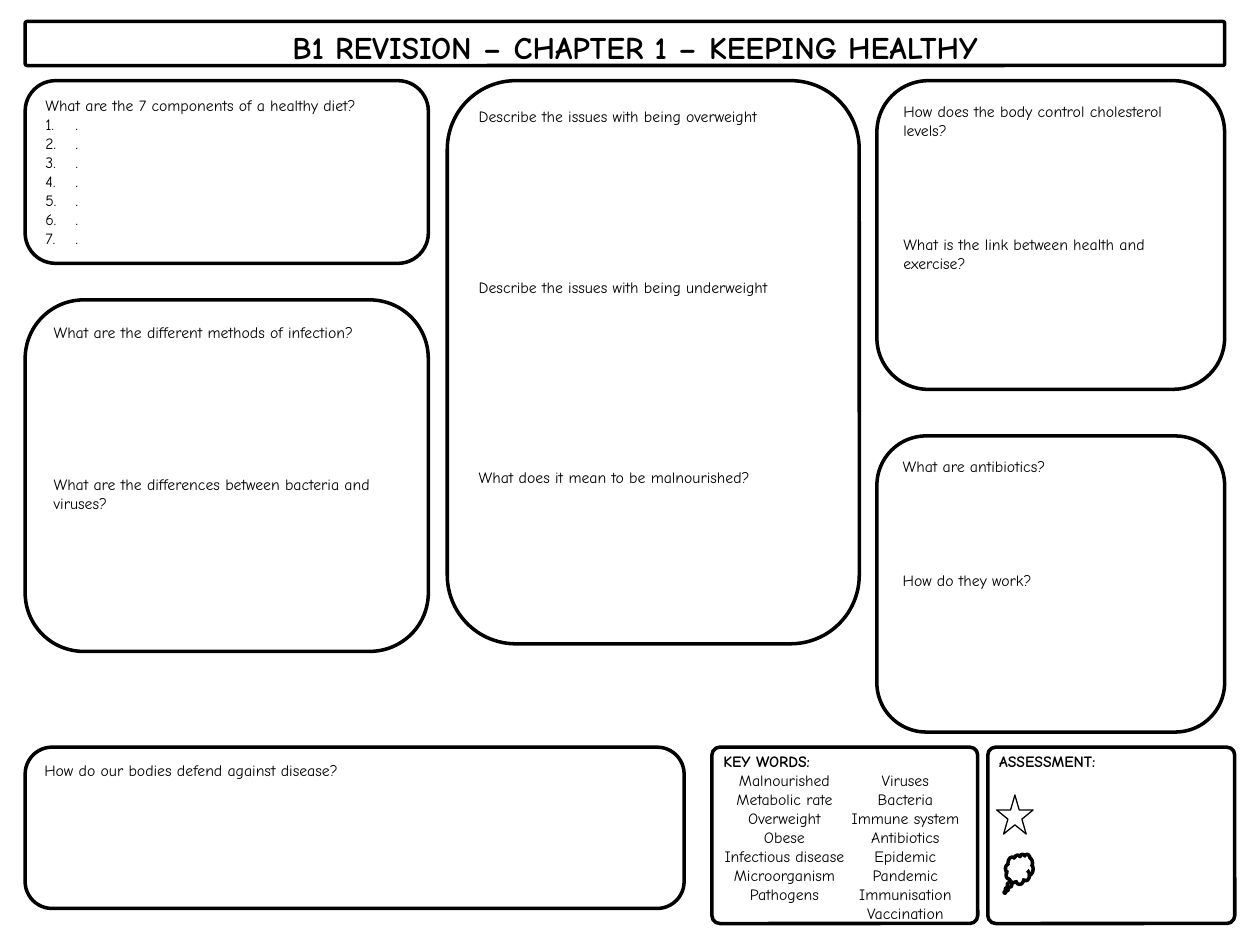
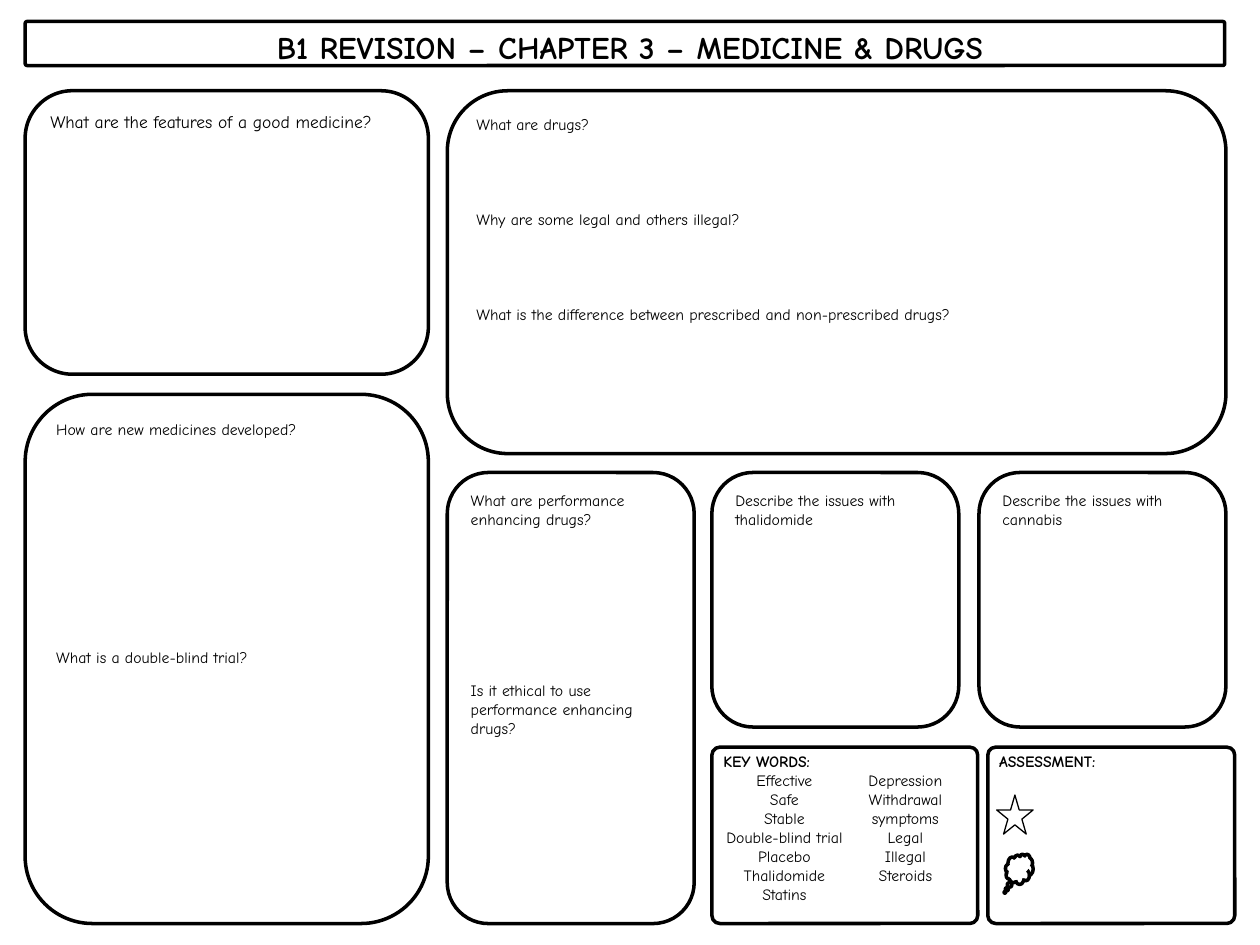
from lxml.etree import SubElement
from pptx import Presentation
from pptx.dml.color import RGBColor
from pptx.enum.shapes import MSO_SHAPE as Preset
from pptx.enum.text import MSO_ANCHOR as Anchor, MSO_AUTO_SIZE as AutoSize, PP_ALIGN as Align
from pptx.oxml.ns import qn
from pptx.util import Inches, Pt

BLACK = RGBColor(0x00, 0x00, 0x00)
WHITE = RGBColor(0xFF, 0xFF, 0xFF)
FONT = "Comic Neue"
BODY_SIZE = 9
TITLE_SIZE = 18
LINE_PITCH = 10.86
CORNER = 0.045
KEYWORDS_BOX = (5.65, 5.93, 2.11, 1.4)
ASSESSMENT_BOX = (7.84, 5.93, 1.96, 1.4)
LEFT_COLUMN, MIDDLE_COLUMN, RIGHT_COLUMN = 0.2, 3.55, 6.96


class RevisionSheet:
    def __init__(self, presentation):
        self.presentation = presentation
        self.slide = None

    def start(self, title, center, width):
        layout = self.presentation.slide_layouts[5]
        self.slide = self.presentation.slides.add_slide(layout)
        self.outline(Preset.ROUNDED_RECTANGLE, (0.2, 0.17, 9.52, 0.35), corner=CORNER)
        placeholder = self.slide.shapes.title
        placeholder.left, placeholder.top = Inches(center - width / 2), Inches(0.17)
        placeholder.width, placeholder.height = Inches(width), Inches(0.4)
        frame = self.prepare(placeholder.text_frame)
        frame.text = title
        self.style(frame.paragraphs[0], TITLE_SIZE, True, Align.CENTER)

    def prepare(self, frame):
        frame.word_wrap = True
        frame.auto_size = AutoSize.NONE
        frame.vertical_anchor = Anchor.TOP
        frame.margin_left = frame.margin_right = Inches(0.09)
        frame.margin_top = frame.margin_bottom = Inches(0.05)
        return frame

    def style(self, paragraph, size=BODY_SIZE, bold=False, align=Align.LEFT, blank_lines=0):
        paragraph.alignment = align
        paragraph.space_before = Pt(LINE_PITCH * blank_lines)
        for run in paragraph.runs:
            run.font.name = FONT
            run.font.size = Pt(size)
            run.font.bold = bold
            run.font.color.rgb = BLACK

    def outline(self, preset, box, weight=2, fill=None, corner=None):
        shape = self.slide.shapes.add_shape(preset, *map(Inches, box))
        shape.shadow.inherit = False
        shape.line.color.rgb = BLACK
        shape.line.width = Pt(weight)
        if fill is None:
            shape.fill.background()
        else:
            shape.fill.solid()
            shape.fill.fore_color.rgb = fill
        if corner is not None:
            shape.adjustments[0] = corner
        return shape

    def text(self, box, lines, bold=False, align=Align.LEFT):
        text_box = self.slide.shapes.add_textbox(*map(Inches, box))
        frame = self.prepare(text_box.text_frame)
        frame.text = "\n".join(lines)
        for paragraph in frame.paragraphs:
            self.style(paragraph, bold=bold, align=align)

    def panel(self, box, questions, size=BODY_SIZE, numbered=0):
        shape = self.outline(Preset.ROUNDED_RECTANGLE, box, fill=WHITE)
        frame = self.prepare(shape.text_frame)
        frame.text = "\n".join(question for question, _ in questions)
        for paragraph, (_, blank_lines) in zip(frame.paragraphs, questions):
            self.style(paragraph, size, blank_lines=blank_lines)
        for _ in range(numbered):
            self.numbered_line(frame.add_paragraph())

    def numbered_line(self, paragraph):
        paragraph.text = "."
        properties = paragraph._p.get_or_add_pPr()
        properties.set("marL", str(Inches(0.24)))
        properties.set("indent", str(-Inches(0.24)))
        SubElement(properties, qn("a:buFont"), typeface=FONT)
        SubElement(properties, qn("a:buAutoNum"), type="arabicPeriod")
        self.style(paragraph)

    def keywords(self, *columns):
        left, top, width, _ = KEYWORDS_BOX
        line_height = LINE_PITCH / 72
        self.outline(Preset.ROUNDED_RECTANGLE, KEYWORDS_BOX, corner=CORNER)
        self.text((left, top - 0.01, width, 0.25), ["KEY WORDS:"], bold=True)
        for index, words in enumerate(columns):
            column_box = (left + 0.96 * index, top - 0.01 + line_height, 1.15, 1.25)
            self.text(column_box, words, align=Align.CENTER)

    def assessment(self):
        left, top, width, _ = ASSESSMENT_BOX
        self.outline(Preset.ROUNDED_RECTANGLE, ASSESSMENT_BOX, corner=CORNER)
        self.text((left, top - 0.01, width, 0.25), ["ASSESSMENT:"], bold=True)
        self.outline(Preset.STAR_5_POINT, (7.91, 6.31, 0.29, 0.31), weight=0.75)
        thought = self.outline(Preset.CLOUD_CALLOUT, (7.98, 6.78, 0.22, 0.24))
        thought.adjustments[0], thought.adjustments[1] = -0.522, 0.761


def build_keeping_healthy(sheet):
    sheet.start("B1 REVISION – CHAPTER 1 – KEEPING HEALTHY", 5.04, 7.2)
    sheet.keywords(
        ["Malnourished", "Metabolic rate", "Overweight", "Obese",
         "Infectious disease", "Microorganism", "Pathogens"],
        ["Viruses", "Bacteria", "Immune system", "Antibiotics",
         "Epidemic", "Pandemic", "Immunisation", "Vaccination"],
    )
    sheet.assessment()
    sheet.panel((LEFT_COLUMN, 0.64, 3.2, 1.45),
                [("What are the 7 components of a healthy diet?", 0)], numbered=7)
    sheet.panel((MIDDLE_COLUMN, 0.64, 3.27, 4.47), [
        ("Describe the issues with being overweight", 0),
        ("Describe the issues with being underweight", 8),
        ("What does it mean to be malnourished?", 9),
    ])
    sheet.panel((LEFT_COLUMN, 2.38, 3.2, 2.79), [
        ("What are the different methods of infection?", 0),
        ("What are the differences between bacteria and viruses?", 7),
    ])
    sheet.panel((LEFT_COLUMN, 5.93, 5.23, 1.28),
                [("How do our bodies defend against disease?", 0)])
    sheet.panel((RIGHT_COLUMN, 0.64, 2.76, 2.45), [
        ("How does the body control cholesterol levels?", 0),
        ("What is the link between health and exercise?", 5),
    ])
    sheet.panel((RIGHT_COLUMN, 3.46, 2.76, 2.35), [
        ("What are antibiotics?", 0),
        ("How do they work?", 5),
    ])


def build_medicine_and_drugs(sheet):
    sheet.start("B1 REVISION – CHAPTER 3 – MEDICINE & DRUGS", 5, 7.56)
    sheet.keywords(
        ["Effective", "Safe", "Stable", "Double-blind trial",
         "Placebo", "Thalidomide", "Statins"],
        ["Depression", "Withdrawal symptoms", "Legal", "Illegal", "Steroids"],
    )
    sheet.assessment()
    sheet.panel((LEFT_COLUMN, 0.72, 3.2, 2.25),
                [("What are the features of a good medicine?", 0)], size=10)
    sheet.panel((LEFT_COLUMN, 3.13, 3.2, 4.2), [
        ("How are new medicines developed?", 0),
        ("What is a double-blind trial?", 11),
    ])
    sheet.panel((MIDDLE_COLUMN, 0.72, 6.18, 2.88), [
        ("What are drugs?", 0),
        ("Why are some legal and others illegal?", 4),
        ("What is the difference between prescribed and non-prescribed drugs?", 4),
    ])
    sheet.panel((MIDDLE_COLUMN, 3.75, 1.96, 3.58), [
        ("What are performance enhancing drugs?", 0),
        ("Is it ethical to use performance enhancing drugs?", 8),
    ])
    for left, drug in ((5.65, "thalidomide"), (7.77, "cannabis")):
        sheet.panel((left, 3.75, 1.96, 2.02), [(f"Describe the issues with {drug}", 0)])


def main():
    presentation = Presentation()
    presentation.slide_width, presentation.slide_height = Inches(10), Inches(7.5)
    sheet = RevisionSheet(presentation)
    build_keeping_healthy(sheet)
    build_medicine_and_drugs(sheet)
    presentation.save("out.pptx")


if __name__ == "__main__":
    main()
